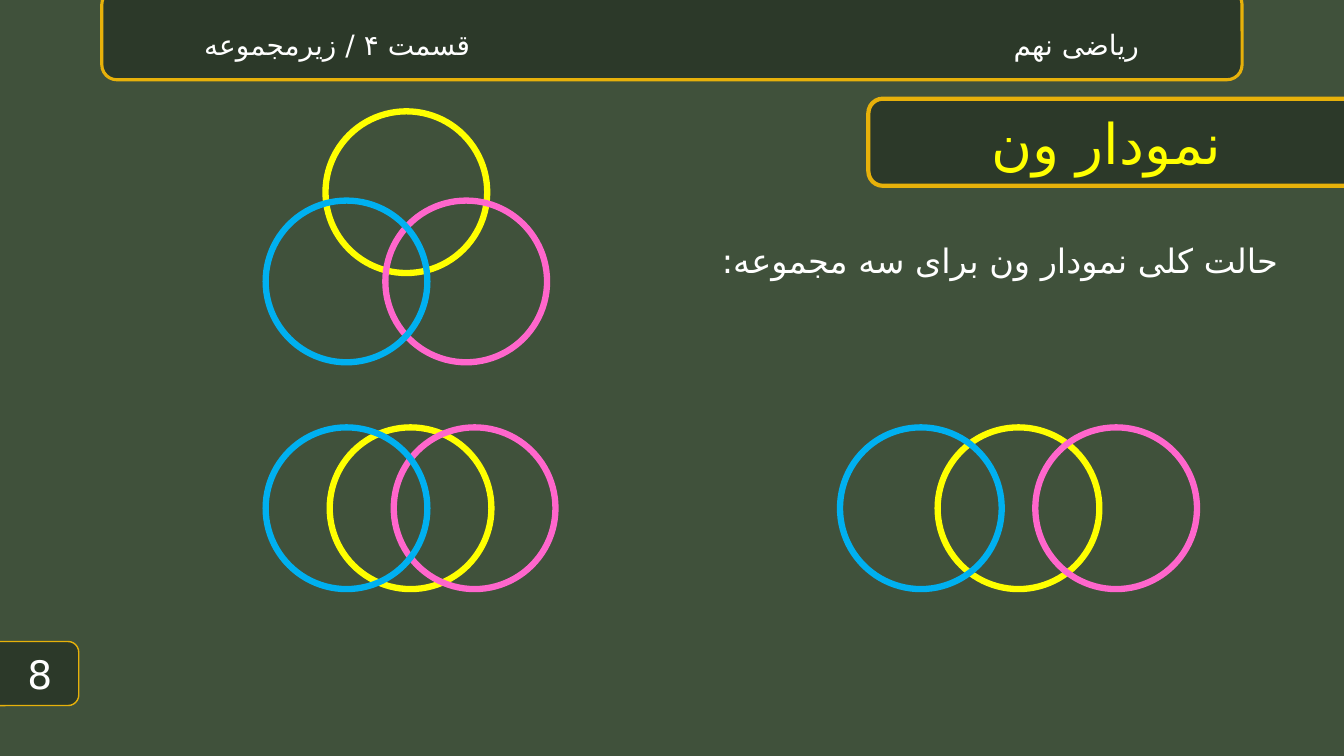
"""Build the Venn diagram slide of a Persian mathematics lesson."""
from lxml.etree import SubElement
from pptx import Presentation
from pptx.dml.color import RGBColor
from pptx.enum.shapes import MSO_SHAPE as Shape
from pptx.enum.text import MSO_ANCHOR as Anchor, PP_ALIGN as Align
from pptx.oxml.ns import qn
from pptx.util import Pt

PX = 9525
SLIDE_SIZE = (1280, 720)
FONT = "Roboto"
PERSIAN_FONT = "DejaVu Sans"
COLORS = {
    "board": "40513B", "panel": "2C3929", "gold": "E7B10A", "white": "FFFFFF",
    "yellow": "FFFF00", "pink": "FF66CC", "blue": "00B0F0",
}

PANELS = [
    ((97, -10, 1086, 86), 2.25),
    ((827, 94, 478, 83), 3),
    ((-14, 611, 89, 61), 1),
]
TITLE = ("نمودار ون", (827, 94, 453, 83), 40)
LABELS = [
    ("ریاضی نهم", (925, 19, 200, 47), 20),
    ("قسمت ۴ / زیرمجموعه", (171, 19, 300, 47), 20),
    ("8", (1, 604, 74, 76), 28),
]
STATEMENT = ("حالت کلی نمودار ون برای سه مجموعه:", (141, 205, 1086, 63), 24)

DIAMETER = 154
SETS = [("yellow", 1), ("pink", 2), ("blue", 0)]
DIAGRAMS = [
    {"left": 800, "top": 407, "step": 93, "rise": 0},
    {"left": 253, "top": 407, "step": 61, "rise": 0},
    {"left": 253, "top": 191, "step": 57, "rise": 85},
]


def rgb(name):
    return RGBColor.from_string(COLORS[name])


def emu(box):
    return [length * PX for length in box]


def outline(shape, color, width):
    shape.shadow.inherit = False
    shape.line.color.rgb = rgb(color)
    shape.line.width = Pt(width)


def write(holder, text, size, color="white", align=Align.CENTER, anchor=Anchor.MIDDLE):
    frame = holder.text_frame
    frame.word_wrap = True
    frame.vertical_anchor = anchor
    paragraph = frame.paragraphs[0]
    paragraph.text = text
    paragraph.alignment = align
    font = paragraph.font
    font.name, font.size, font.bold = FONT, Pt(size), False
    font.color.rgb = rgb(color)
    properties = paragraph._p.get_or_add_pPr()
    properties.set("rtl", "1")
    SubElement(properties.find(qn("a:defRPr")), qn("a:cs"), typeface=PERSIAN_FONT)
    return paragraph


def add_panel(slide, box, width):
    panel = slide.shapes.add_shape(Shape.ROUNDED_RECTANGLE, *emu(box))
    panel.fill.solid()
    panel.fill.fore_color.rgb = rgb("panel")
    outline(panel, "gold", width)


def add_venn(slide, left, top, step, rise):
    venn = slide.shapes.add_group_shape()
    for color, place in SETS:
        y = top - rise if place == 1 else top
        box = (left + place * step, y, DIAMETER, DIAMETER)
        circle = venn.shapes.add_shape(Shape.OVAL, *emu(box))
        circle.fill.background()
        outline(circle, color, 4.5)


def main():
    deck = Presentation()
    deck.slide_width, deck.slide_height = emu(SLIDE_SIZE)
    slide = deck.slides.add_slide(deck.slide_layouts[5])
    slide.background.fill.solid()
    slide.background.fill.fore_color.rgb = rgb("board")

    for box, width in PANELS:
        add_panel(slide, box, width)

    text, box, size = TITLE
    title = slide.shapes.title
    title.left, title.top, title.width, title.height = emu(box)
    write(title, text, size, "yellow")
    tree = slide.shapes._spTree
    tree.remove(title._element)
    tree.append(title._element)

    for text, box, size in LABELS:
        write(slide.shapes.add_textbox(*emu(box)), text, size)

    text, box, size = STATEMENT
    statement = slide.shapes.add_textbox(*emu(box))
    paragraph = write(statement, text, size, align=Align.JUSTIFY, anchor=Anchor.TOP)
    paragraph.line_spacing = 1.5

    for diagram in DIAGRAMS:
        add_venn(slide, **diagram)

    deck.save("out.pptx")


if __name__ == "__main__":
    main()
